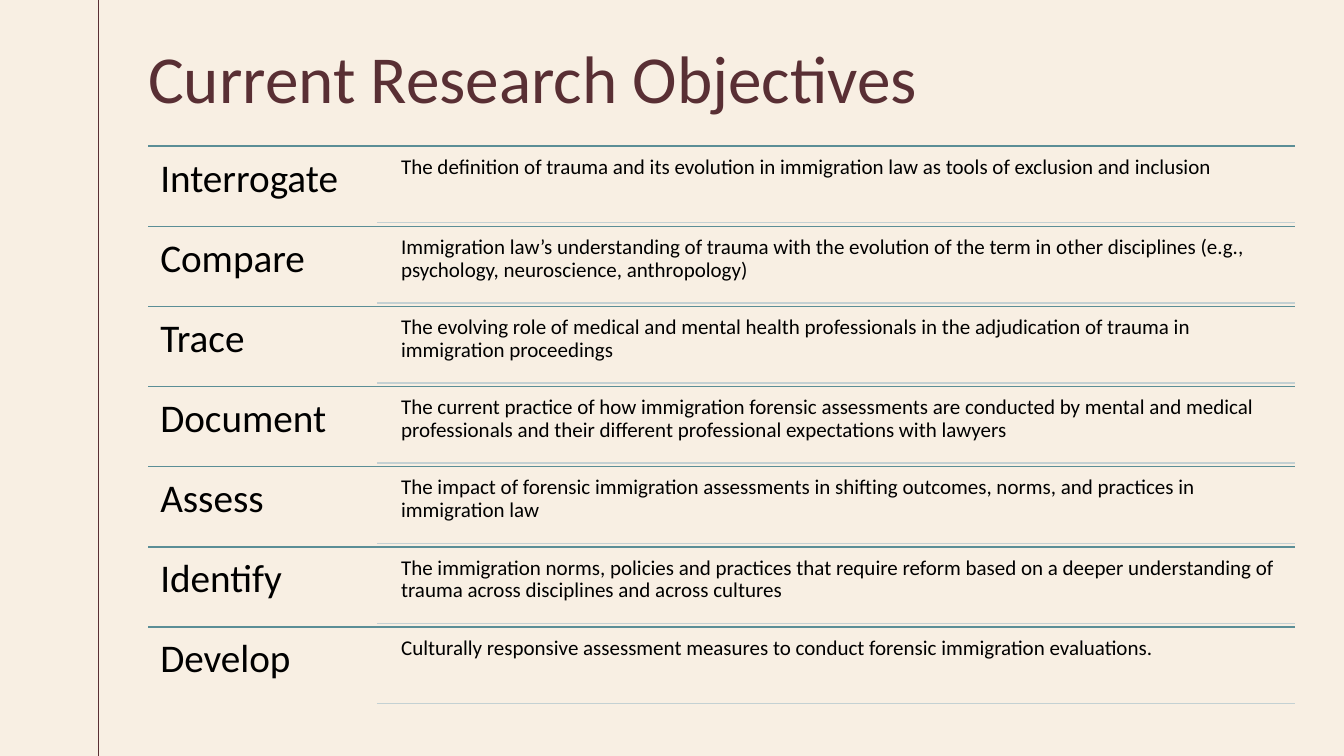
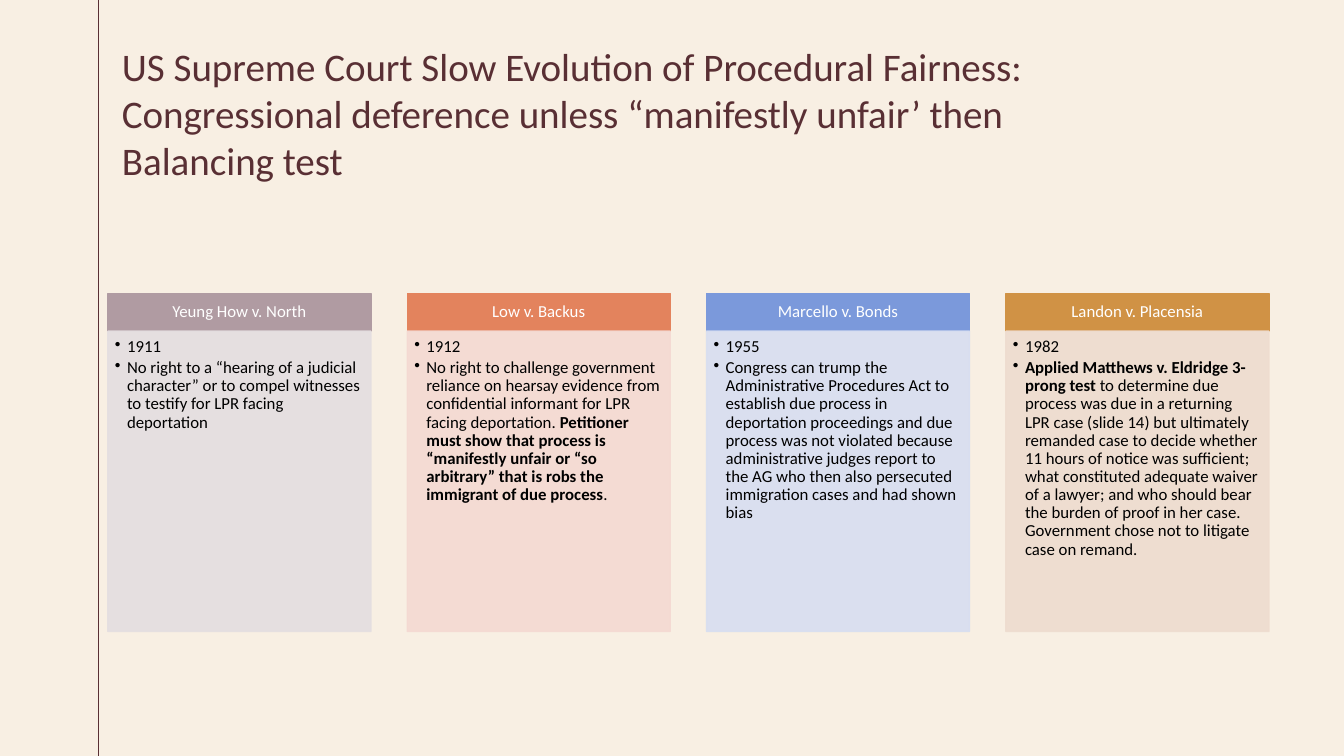
from dataclasses import dataclass
from lxml.etree import SubElement
from pptx import Presentation
from pptx.dml.color import RGBColor
from pptx.enum.shapes import MSO_CONNECTOR, MSO_SHAPE
from pptx.enum.text import MSO_ANCHOR, PP_ALIGN
from pptx.oxml.ns import qn
from pptx.util import Pt


@dataclass(frozen=True)
class Theme:
    face: str = "Calibri"
    paper: str = "F8EFE3"
    wine: str = "592F34"
    teal: str = "5B8E96"
    mist: str = "C4D1D3"
    ink: str = "000000"
    white: str = "FFFFFF"
    title: float = 48
    long: float = 27.9
    verb: float = 28
    goal: float = 15
    case: float = 12


theme = Theme()
PX = 4572  # 200 px to the inch
WIDE, HIGH = 2667, 1500


# Write paragraphs, each a list of (text, bold) runs, into a shape
def write(shape, paras, size, color, pad=(0, 0, 0, 0), bullet=False,
          frame=None, para=None):
    box = shape.text_frame
    sides = ("margin_left", "margin_top", "margin_right", "margin_bottom")
    form = {"word_wrap": True, "vertical_anchor": MSO_ANCHOR.TOP}
    form.update(zip(sides, [n * PX for n in pad]))
    form.update(frame or {})
    for name, value in form.items():
        setattr(box, name, value)
    for i, runs in enumerate(paras):
        line = box.paragraphs[0] if i == 0 else box.add_paragraph()
        for name, value in {"alignment": PP_ALIGN.LEFT, **(para or {})}.items():
            setattr(line, name, value)
        if bullet:
            props = line._p.get_or_add_pPr()
            props.set("marL", str(24 * PX))
            props.set("indent", str(-24 * PX))
            SubElement(props, qn("a:buChar")).set("char", "•")
        for words, bold in runs:
            run = line.add_run()
            run.text = words
            font = {"name": theme.face, "size": Pt(size), "bold": bold}
            for name, value in font.items():
                setattr(run.font, name, value)
            run.font.color.rgb = RGBColor.from_string(color)


# Draw a straight line without a shadow
def rule(page, x1, y1, x2, y2, color, width=1):
    ends = [n * PX for n in (x1, y1, x2, y2)]
    line = page.shapes.add_connector(MSO_CONNECTOR.STRAIGHT, *ends)
    line.line.color.rgb = RGBColor.from_string(color)
    line.line.width = Pt(width)
    SubElement(line._element.spPr, qn("a:effectLst"))


deck = Presentation()
deck.slide_width, deck.slide_height = WIDE * PX, HIGH * PX
back = deck.slide_master.background.fill
back.solid()
back.fore_color.rgb = RGBColor.from_string(theme.paper)

# Shared page: margin rule and title
heads = [
    ("Current Research Objectives", theme.title, (294, 72, 2276, 276)),
    ("US Supreme Court Slow Evolution of Procedural Fairness: "
     "Congressional deference unless “manifestly unfair’ then Balancing test",
     theme.long, (242, 84, 2010, 276)),
]
pages = []
for words, size, place in heads:
    page = deck.slides.add_slide(deck.slide_layouts[6])
    rule(page, 196, 0, 196, HIGH, theme.wine, 0.75)
    box = page.shapes.add_textbox(*[n * PX for n in place])
    write(box, [[(words, False)]], size, theme.wine)
    pages.append(page)
goals, cases = pages

# Objectives: one ruled row per verb
rows = [
    ("Interrogate", "The definition of trauma and its evolution in immigration "
     "law as tools of exclusion and inclusion"),
    ("Compare", "Immigration law’s understanding of trauma with the evolution of "
     "the term in other disciplines (e.g., psychology, neuroscience, anthropology)"),
    ("Trace", "The evolving role of medical and mental health professionals in "
     "the adjudication of trauma in immigration proceedings"),
    ("Document", "The current practice of how immigration forensic assessments "
     "are conducted by mental and medical professionals and their different "
     "professional expectations with lawyers"),
    ("Assess", "The impact of forensic immigration assessments in shifting "
     "outcomes, norms, and practices in immigration law"),
    ("Identify", "The immigration norms, policies and practices that require "
     "reform based on a deeper understanding of trauma across disciplines and "
     "across cultures"),
    ("Develop", "Culturally responsive assessment measures to conduct forensic "
     "immigration evaluations."),
]
LEFT, RIGHT, TOP, STEP = 294, 2570, 290, 159
tight = {"line_spacing": 0.9}
for i, (verb, goal) in enumerate(rows):
    y = TOP + i * STEP
    rule(goals, LEFT, y, RIGHT, y, theme.teal)
    cells = [
        (verb, theme.verb, (LEFT, y, 456, STEP), 24),
        (goal, theme.goal, (784, y + 8, 1786, 144), 12),
    ]
    for words, size, place, pad in cells:
        box = goals.shapes.add_textbox(*[n * PX for n in place])
        write(box, [[(words, False)]], size, theme.ink, [pad] * 4, para=tight)
    rule(goals, 748, y + 152, RIGHT, y + 152, theme.mist)

# Court cases: a header and a tinted body per column
columns = [
    ("Yeung How v. North", "B09BA2", "E4DEE0", "1911",
     [("No right to a “hearing of a judicial character” or to compel witnesses "
       "to testify for LPR facing deportation", False)]),
    ("Low v. Backus", "E3835D", "F4D9D2", "1912",
     [("No right to challenge government reliance on hearsay evidence from "
       "confidential informant for LPR facing deportation. ", False),
      ("Petitioner must show that process is “manifestly unfair or “so "
       "arbitrary” that is robs the immigrant of due process", True),
      (".", False)]),
    ("Marcello v. Bonds", "7B99DB", "D7DEF1", "1955",
     [("Congress can trump the Administrative Procedures Act to establish due "
       "process in deportation proceedings and due process was not violated "
       "because administrative judges report to the AG who then also persecuted "
       "immigration cases and had shown bias", False)]),
    ("Landon v. Placensia", "D09245", "EEDCCF", "1982",
     [("Applied Matthews v. Eldridge 3-prong test ", True),
      ("to determine due process was due in a returning LPR case (slide 14) but "
       "ultimately remanded case to decide whether 11 hours of notice was "
       "sufficient; what constituted adequate waiver of a lawyer; and who should "
       "bear the burden of proof in her case. Government chose not to litigate "
       "case on remand.", False)]),
]
middle = {"vertical_anchor": MSO_ANCHOR.MIDDLE}
center = {**tight, "alignment": PP_ALIGN.CENTER}
spaced = {**tight, "space_after": Pt(2)}
for i, (name, dark, pale, year, ruling) in enumerate(columns):
    x = 214 + i * 594
    parts = []
    for y, high, tint in ((582, 75, dark), (657, 596, pale)):
        place = [n * PX for n in (x, y, 522, high)]
        part = cases.shapes.add_shape(MSO_SHAPE.RECTANGLE, *place)
        part.shadow.inherit = False
        part.fill.solid()
        part.line.width = Pt(1)
        for fill in (part.fill, part.line.fill):
            fill.solid()
            fill.fore_color.rgb = RGBColor.from_string(tint)
        parts.append(part)
    head, body = parts
    for color in body._element.spPr.iter(qn("a:srgbClr")):
        SubElement(color, qn("a:alpha")).set("val", "90000")
    write(head, [[(name, False)]], theme.case, theme.white, (18, 10, 18, 10),
          frame=middle, para=center)
    write(body, [[(year, False)], ruling], theme.case, theme.ink,
          (14, 14, 18, 20), bullet=True, para=spaced)

deck.save("out.pptx")
